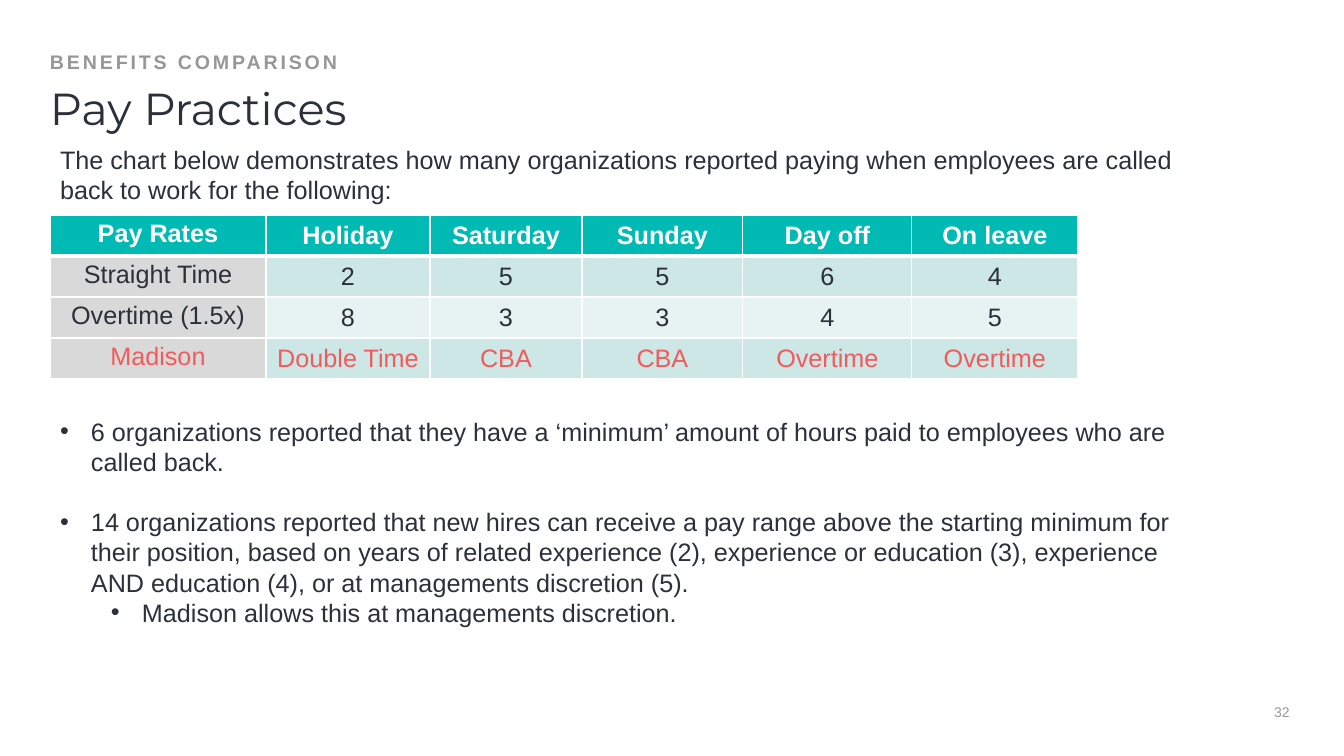
from lxml import etree
from pptx import Presentation, util as u
from pptx.dml.color import RGBColor
from pptx.enum import text
from pptx.oxml.ns import qn

PX = 914400 / 100.8
INK = RGBColor(0x2B, 0x30, 0x3A)
GREY = RGBColor(0x97, 0x97, 0x97)
TEAL = RGBColor(0x00, 0xBA, 0xB3)
CORAL = RGBColor(0xF1, 0x5B, 0x5C)
WHITE = RGBColor(0xFF, 0xFF, 0xFF)
LABEL_FILL = RGBColor(0xD9, 0xD9, 0xD9)
BAND_FILLS = [RGBColor(0xE7, 0xF3, 0xF2), RGBColor(0xCC, 0xE7, 0xE5)]
TOP, MIDDLE, BOTTOM = (text.MSO_ANCHOR.TOP, text.MSO_ANCHOR.MIDDLE,
                       text.MSO_ANCHOR.BOTTOM)
LEFT, CENTER = text.PP_ALIGN.LEFT, text.PP_ALIGN.CENTER


def px(count):
    return u.Emu(round(count * PX))


def write(para, words, color, size=18, name="Arial", bold=False, align=LEFT):
    para.alignment = align
    span = para.add_run()
    span.text = words
    span.font.color.rgb = color
    for key, value in {"size": u.Pt(size), "name": name, "bold": bold}.items():
        setattr(span.font, key, value)
    return span


deck = Presentation()
deck.slide_width, deck.slide_height = px(1344), px(756)
page = deck.slides.add_slide(deck.slide_layouts[6])

# Page number, title, section label and body: place, insets, anchor
frames = []
for place, insets, anchor in [
    ((1262, 703, 40, 17), (0, 0, 0, 0), MIDDLE),
    ((50, 77, 1243, 59), (0, 10, 0, 0), TOP),
    ((50, 53, 1243, 21), (0, 0, 0, 0), BOTTOM),
    ((50, 139, 1149, 559), (10, 5, 10, 5), TOP),
]:
    frame = page.shapes.add_textbox(*map(px, place)).text_frame
    frame.word_wrap = True
    frame.vertical_anchor = anchor
    for side, inset in zip(("left", "top", "right", "bottom"), insets):
        setattr(frame, f"margin_{side}", px(inset))
    frames.append(frame)
number, title, section, body = frames

write(number.paragraphs[0], "32", GREY, size=10, align=CENTER)
write(title.paragraphs[0], "Pay Practices", INK, size=32, name="Montserrat")
label = write(section.paragraphs[0], "BENEFITS COMPARISON", GREY, size=14, bold=True)
label.font._element.set("spc", "200")
for frame in (title, section):
    frame.paragraphs[0].line_spacing = 0.9

write(body.paragraphs[0], "The chart below demonstrates how many organizations "
      "reported paying when employees are called back to work for the following:", INK)

# Bullets: level, space before in points, left margin, words
for level, gap, margin, words in [
    (0, 151, 31, "6 organizations reported that they have a ‘minimum’ amount of "
     "hours paid to employees who are called back."),
    (0, 21.5, 31, "14 organizations reported that new hires can receive a pay range "
     "above the starting minimum for their position, based on years of related "
     "experience (2), experience or education (3), experience AND education (4), "
     "or at managements discretion (5)."),
    (1, 0, 82, "Madison allows this at managements discretion."),
]:
    para = body.add_paragraph()
    para.level = level
    props = para._p.get_or_add_pPr()
    props.set("marL", str(px(margin)))
    props.set("indent", str(-px(31)))
    etree.SubElement(props, qn("a:buFont"), typeface="Arial")
    etree.SubElement(props, qn("a:buChar"), char="•")
    para.space_before = u.Pt(gap)
    write(para, words, INK)

rows = [
    ["Pay Rates", "Holiday", "Saturday", "Sunday", "Day off", "On leave"],
    ["Straight Time", "2", "5", "5", "6", "4"],
    ["Overtime (1.5x)", "8", "3", "3", "4", "5"],
    ["Madison", "Double Time", "CBA", "CBA", "Overtime", "Overtime"],
]
row_colors = [WHITE, INK, INK, CORAL]
widths = [216, 164, 152, 161, 169, 166]
table = page.shapes.add_table(len(rows), len(widths), px(50), px(215),
                              px(sum(widths)), px(41 * len(rows))).table
for column, width in zip(table.columns, widths):
    column.width = px(width)

for r, row in enumerate(rows):
    table.rows[r].height = px(41)
    for c, words in enumerate(row):
        cell = table.cell(r, c)
        cell.vertical_anchor = MIDDLE if c else TOP
        write(cell.text_frame.paragraphs[0], words, row_colors[r],
              bold=r == 0, align=CENTER)
        props = cell._tc.get_or_add_tcPr()
        for side in "LRTB":
            heavy = (r, side) in {(0, "B"), (1, "T")}
            line = etree.SubElement(props, qn(f"a:ln{side}"),
                                    w=str(u.Pt(3 if heavy else 1)))
            solid = etree.SubElement(line, qn("a:solidFill"))
            etree.SubElement(solid, qn("a:srgbClr"), val=str(WHITE))
        cell.fill.solid()
        cell.fill.fore_color.rgb = (TEAL if r == 0 else
                                    BAND_FILLS[r % 2] if c else LABEL_FILL)

deck.save("out.pptx")
